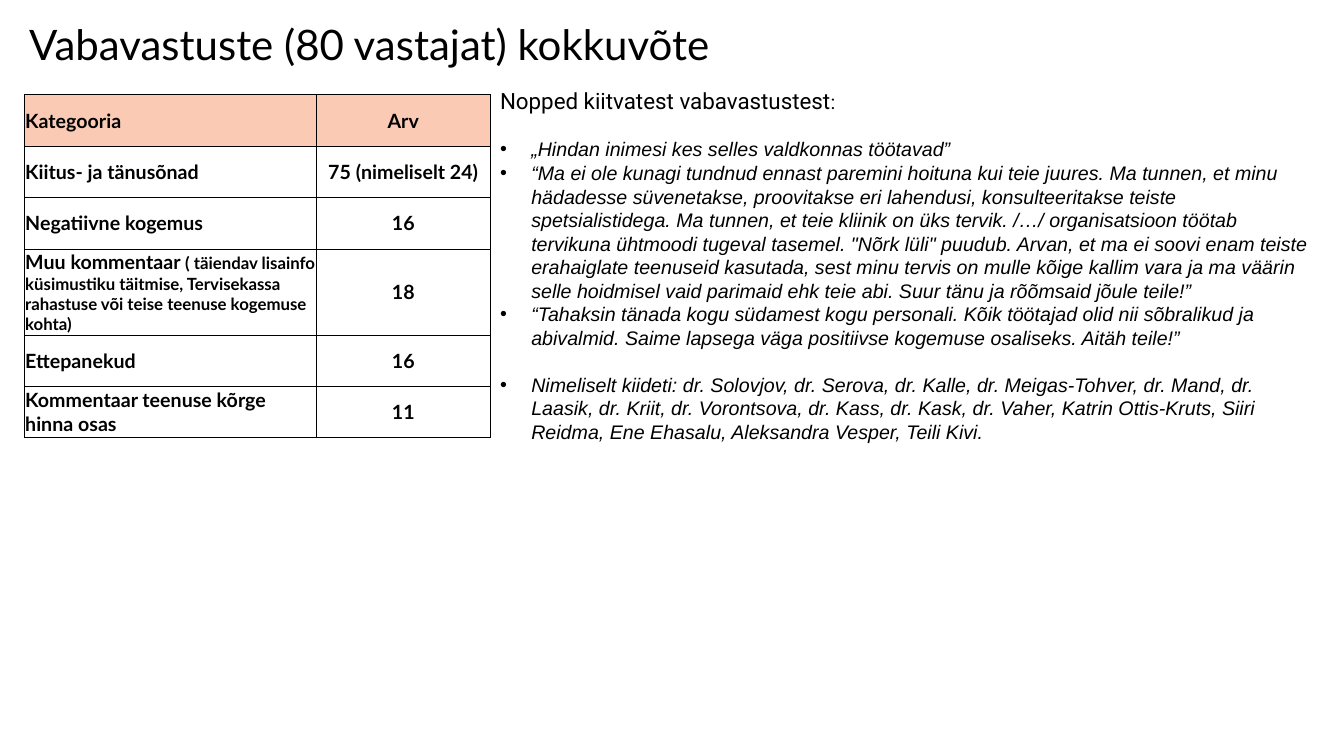
import pptx
import pptx.dml.color
import pptx.enum.text
import pptx.oxml.ns
import pptx.util
from lxml import etree

Inches, Pt = pptx.util.Inches, pptx.util.Pt
ALIGN = pptx.enum.text.PP_ALIGN
ANCHOR = pptx.enum.text.MSO_ANCHOR
qn = pptx.oxml.ns.qn

# Content
TITLE = "Vabavastuste (80 vastajat) kokkuvõte"
# Each category is a list of (text, size) runs; "\n" is a line break
CATEGORIES = [
    ([("Kategooria", 14)], "Arv"),
    ([("Kiitus- ja tänusõnad", 14)], "75 (nimeliselt 24)"),
    ([("Negatiivne kogemus", 14)], "16"),
    ([("Muu kommentaar ", 14),
      ("( täiendav lisainfo küsimustiku täitmise, Tervisekassa rahastuse "
       "või teise teenuse kogemuse kohta)", 12)], "18"),
    ([("Ettepanekud", 14)], "16"),
    ([("Kommentaar teenuse kõrge\nhinna osas", 14)], "11"),
]
COLUMN_WIDTHS = [2.9, 1.72]
ROW_HEIGHTS = [0.51, 0.51, 0.51, 0.6, 0.51, 0.51]
QUOTES_HEADING = [("Nopped kiitvatest vabavastustest", 16), (":", 14)]
# (text, space before in points)
QUOTES = [
    ("„Hindan inimesi kes selles valdkonnas töötavad”", 16.4),
    ("“Ma ei ole kunagi tundnud ennast paremini hoituna kui teie juures. "
     "Ma tunnen, et minu hädadesse süvenetakse, proovitakse eri lahendusi, "
     "konsulteeritakse teiste spetsialistidega. Ma tunnen, et teie kliinik "
     "on üks tervik. /…/ organisatsioon töötab tervikuna ühtmoodi tugeval "
     "tasemel. \"Nõrk lüli\" puudub. Arvan, et ma ei soovi enam teiste "
     "erahaiglate teenuseid kasutada, sest minu tervis on mulle kõige kallim "
     "vara ja ma väärin selle hoidmisel vaid parimaid ehk teie abi. Suur tänu "
     "ja rõõmsaid jõule teile!”", 0),
    ("“Tahaksin tänada kogu südamest kogu personali. Kõik töötajad olid nii "
     "sõbralikud ja abivalmid. Saime lapsega väga positiivse kogemuse "
     "osaliseks. Aitäh teile!”", 0),
    ("Nimeliselt kiideti: dr. Solovjov, dr. Serova, dr. Kalle, "
     "dr. Meigas-Tohver, dr. Mand, dr. Laasik, dr. Kriit, dr. Vorontsova, "
     "dr. Kass, dr. Kask, dr. Vaher, Katrin Ottis-Kruts, Siiri Reidma, "
     "Ene Ehasalu, Aleksandra Vesper, Teili Kivi.", 16.8),
]
BLACK, PEACH = "000000", "FACAB4"


def color(value):
    return pptx.dml.color.RGBColor.from_string(value)


def add_text(paragraph, text, size, font, bold=False, italic=False):
    for i, line in enumerate(text.split("\n")):
        if i:
            paragraph.add_line_break()
        run = paragraph.add_run()
        run.text = line
        run.font.size, run.font.name = Pt(size), font
        run.font.bold, run.font.italic = bold, italic
        run.font.color.rgb = color(BLACK)


def add_box(slide, left, top, width, height):
    frame = slide.shapes.add_textbox(
        Inches(left), Inches(top), Inches(width), Inches(height)).text_frame
    frame.word_wrap = True
    frame.margin_left = frame.margin_right = Inches(0.05)
    frame.margin_top = frame.margin_bottom = Inches(0.05)
    return frame


def add_bullet(paragraph, indent):
    props = paragraph._p.get_or_add_pPr()
    props.set("marL", str(indent))
    props.set("indent", str(-indent))
    etree.SubElement(props, qn("a:buFont")).set("typeface", "Arial")
    etree.SubElement(props, qn("a:buChar")).set("char", "•")


def add_borders(cell, points):
    props = cell._tc.get_or_add_tcPr()
    for side in ("a:lnL", "a:lnR", "a:lnT", "a:lnB"):
        line = etree.SubElement(props, qn(side), w=str(Pt(points)))
        fill = etree.SubElement(line, qn("a:solidFill"))
        etree.SubElement(fill, qn("a:srgbClr"), val=BLACK)


def fill_cell(cell, runs, align, header):
    add_borders(cell, 0.5)
    if header:
        cell.fill.solid()
        cell.fill.fore_color.rgb = color(PEACH)
    else:
        cell.fill.background()
    cell.vertical_anchor = ANCHOR.MIDDLE
    cell.margin_left = cell.margin_right = Inches(0.01)
    cell.margin_top = cell.margin_bottom = Inches(0.01)
    paragraph = cell.text_frame.paragraphs[0]
    paragraph.alignment = align
    for text, size in runs:
        add_text(paragraph, text, size, "Lato", bold=True)


def main():
    deck = pptx.Presentation()
    deck.slide_width, deck.slide_height = Inches(13.33), Inches(7.5)
    slide = deck.slides.add_slide(deck.slide_layouts[6])

    # Title
    title = add_box(slide, 0.24, 0, 11.5, 0.93)
    title.vertical_anchor = ANCHOR.MIDDLE
    title.paragraphs[0].line_spacing = 0.9
    add_text(title.paragraphs[0], TITLE, 30, "Lato")

    # Category table
    table = slide.shapes.add_table(
        len(CATEGORIES), len(COLUMN_WIDTHS), Inches(0.24), Inches(0.94),
        Inches(sum(COLUMN_WIDTHS)), Inches(sum(ROW_HEIGHTS))).table
    table.first_row = table.horz_banding = False
    for column, width in zip(table.columns, COLUMN_WIDTHS):
        column.width = Inches(width)
    for r, (category, count) in enumerate(CATEGORIES):
        table.rows[r].height = Inches(ROW_HEIGHTS[r])
        fill_cell(table.cell(r, 0), category, ALIGN.LEFT, r == 0)
        fill_cell(table.cell(r, 1), [(count, 14)], ALIGN.CENTER, r == 0)

    # Quotes
    quotes = add_box(slide, 4.91, 0.82, 8.14, 4.14)
    for text, size in QUOTES_HEADING:
        add_text(quotes.paragraphs[0], text, size, "Roboto")
    for text, space in QUOTES:
        paragraph = quotes.add_paragraph()
        paragraph.line_spacing = Pt(16.8)
        paragraph.space_before = Pt(space)
        add_bullet(paragraph, Inches(0.31))
        add_text(paragraph, text, 14, "Arial", italic=True)

    deck.save("out.pptx")


if __name__ == "__main__":
    main()
